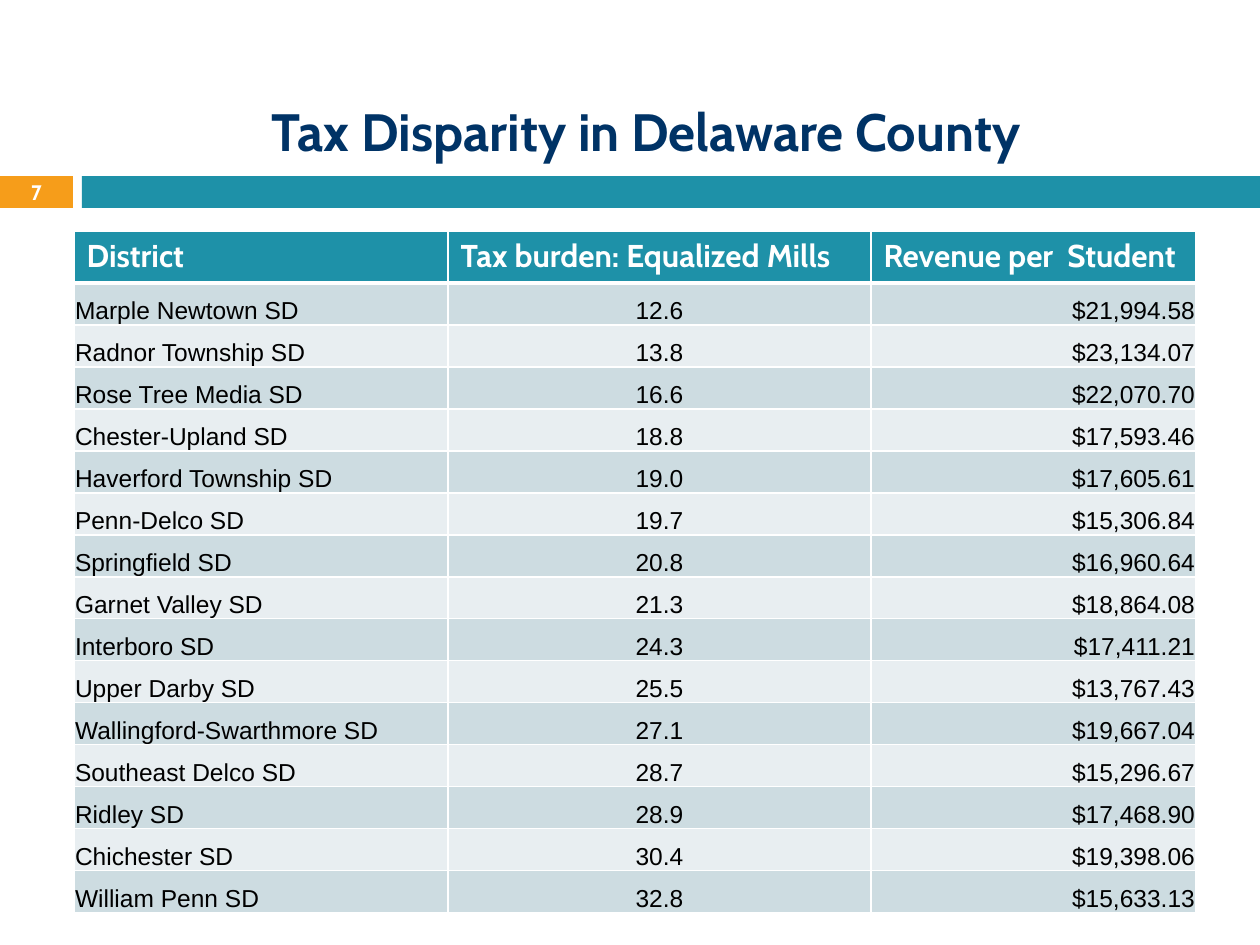
from lxml.etree import SubElement
from pptx import Presentation
from pptx.dml.color import RGBColor
from pptx.enum.shapes import MSO_SHAPE as Shape
from pptx.enum.text import MSO_ANCHOR as Anchor, PP_ALIGN as Align
from pptx.oxml.ns import qn
from pptx.util import Pt

PX = 914400 / 126
COLORS = {
    "orange": "F69D1A", "teal": "1E91A8", "navy": "003366", "white": "FFFFFF",
    "black": "000000", "band_dark": "CDDCE1", "band_light": "E8EEF1",
}
HEADER = ("District", "Tax burden: Equalized Mills", "Revenue per  Student")
DISTRICTS = [
    ("Marple Newtown SD", "12.6", "$21,994.58"),
    ("Radnor Township SD", "13.8", "$23,134.07"),
    ("Rose Tree Media SD", "16.6", "$22,070.70"),
    ("Chester-Upland SD", "18.8", "$17,593.46"),
    ("Haverford Township SD", "19.0", "$17,605.61"),
    ("Penn-Delco SD", "19.7", "$15,306.84"),
    ("Springfield SD", "20.8", "$16,960.64"),
    ("Garnet Valley SD", "21.3", "$18,864.08"),
    ("Interboro SD", "24.3", "$17,411.21"),
    ("Upper Darby SD", "25.5", "$13,767.43"),
    ("Wallingford-Swarthmore SD", "27.1", "$19,667.04"),
    ("Southeast Delco SD", "28.7", "$15,296.67"),
    ("Ridley SD", "28.9", "$17,468.90"),
    ("Chichester SD", "30.4", "$19,398.06"),
    ("William Penn SD", "32.8", "$15,633.13"),
]
COLUMN_WIDTHS = (374, 423, 325)
COLUMN_ALIGNS = (Align.LEFT, Align.CENTER, Align.RIGHT)
HEADER_HEIGHT, ROW_HEIGHT = 52, 42


def px(*lengths):
    """Turn pixel lengths into a list of EMU."""
    return [round(length * PX) for length in lengths]


def write(frame, text, font, size, color, bold, align):
    frame.text = text
    para = frame.paragraphs[0]
    para.alignment = align
    para.font.name = font
    para.font.size = Pt(size)
    para.font.bold = bold
    para.font.color.rgb = RGBColor.from_string(COLORS[color])


deck = Presentation()
deck.slide_width, deck.slide_height = px(1260, 945)
page = deck.slides.add_slide(deck.slide_layouts[5])

# Bar under the title
for left, width, color in ((0, 73, "orange"), (82, 1178, "teal")):
    bar = page.shapes.add_shape(Shape.RECTANGLE, *px(left, 176, width, 32))
    bar.shadow.inherit = False
    bar.fill.solid()
    bar.fill.fore_color.rgb = RGBColor.from_string(COLORS[color])
    bar.line.fill.background()

title = page.shapes.title
title.left, title.top, title.width, title.height = px(84, 32, 1124, 136)
title.text_frame.vertical_anchor = Anchor.BOTTOM
write(title.text_frame, "Tax Disparity in Delaware County", "Cabin", 30, "navy", True, Align.CENTER)

number = page.shapes.add_textbox(*px(0, 175, 73, 34)).text_frame
number.word_wrap = True
number.vertical_anchor = Anchor.MIDDLE
write(number, "7", "Cabin", 12, "white", True, Align.CENTER)

# Table of districts
rows = [HEADER, *DISTRICTS]
heights = [HEADER_HEIGHT] + [ROW_HEIGHT] * len(DISTRICTS)
table = page.shapes.add_table(
    len(rows), len(HEADER), *px(74, 231, sum(COLUMN_WIDTHS), sum(heights))
).table
for column, width in zip(table.columns, px(*COLUMN_WIDTHS)):
    column.width = width
for row, height in zip(table.rows, px(*heights)):
    row.height = height

for r, texts in enumerate(rows):
    for c, text in enumerate(texts):
        cell = table.cell(r, c)
        if r == 0:
            fill = "teal"
            write(cell.text_frame, text, "Cabin", 18, "white", True, Align.LEFT)
        else:
            fill = "band_dark" if r % 2 else "band_light"
            cell.margin_left, cell.margin_top, cell.margin_right, cell.margin_bottom = px(1, 1, 1, 0)
            cell.vertical_anchor = Anchor.BOTTOM
            write(cell.text_frame, text, "Arial", 14, "black", False, COLUMN_ALIGNS[c])

        # Borders must come before the fill in the cell properties
        properties = cell._tc.get_or_add_tcPr()
        for side in ("lnL", "lnR", "lnT", "lnB"):
            thick = (r, side) in ((0, "lnB"), (1, "lnT"))
            border = SubElement(properties, qn(f"a:{side}"), w=str(Pt(3 if thick else 1)))
            solid = SubElement(border, qn("a:solidFill"))
            SubElement(solid, qn("a:srgbClr"), val=COLORS["white"])
        cell.fill.solid()
        cell.fill.fore_color.rgb = RGBColor.from_string(COLORS[fill])

deck.save("out.pptx")
